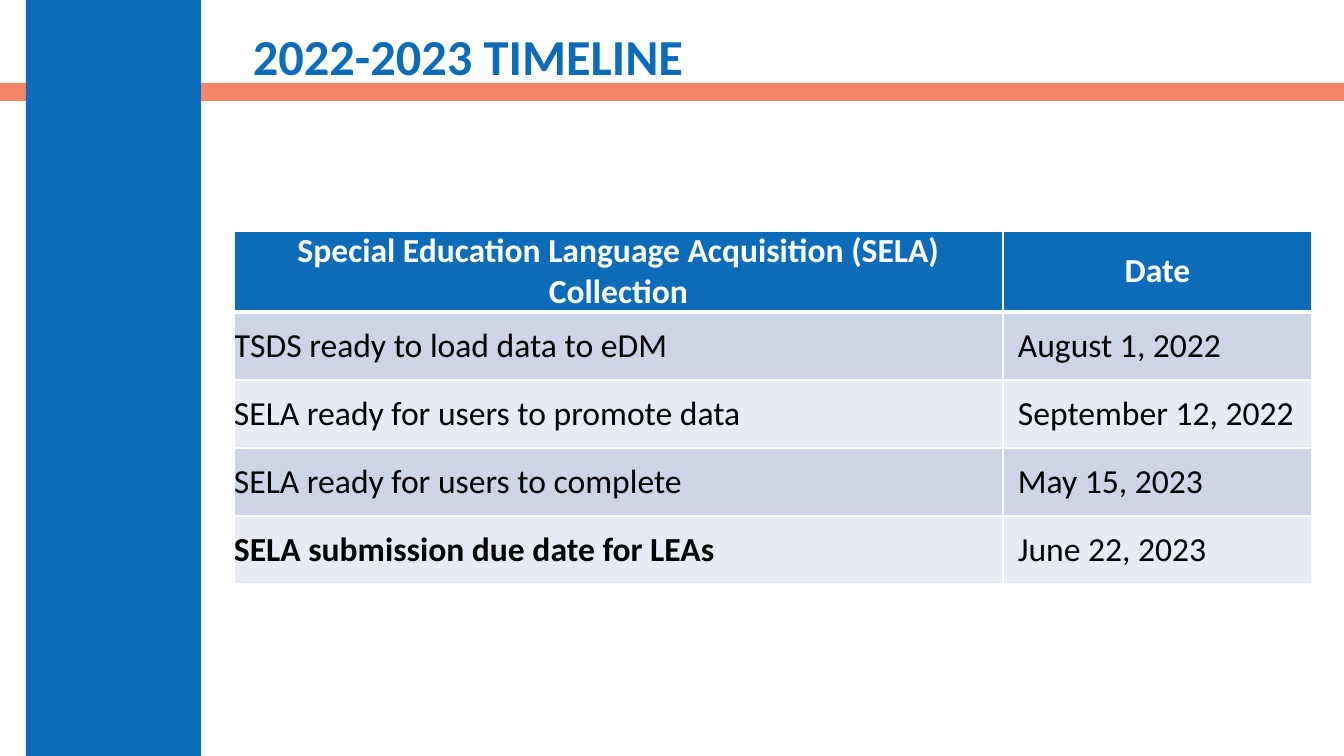
"""Build the 2022-2023 timeline slide with its table of collection dates."""
from dataclasses import dataclass

from lxml import etree
from pptx import Presentation
from pptx.dml.color import RGBColor
from pptx.enum.shapes import MSO_SHAPE
from pptx.enum.text import MSO_ANCHOR, PP_ALIGN
from pptx.oxml.ns import qn
from pptx.util import Emu, Pt

RECTANGLE = MSO_SHAPE.RECTANGLE
MIDDLE = MSO_ANCHOR.MIDDLE
LEFT, CENTER = PP_ALIGN.LEFT, PP_ALIGN.CENTER

PAGE_WIDTH, PAGE_HEIGHT = 1344, 756
EMU_PER_PX = 12192000 / PAGE_WIDTH
FONT = "Calibri"
COLORS = {
    "blue": "0D6CB9",
    "coral": "F16038",
    "white": "FFFFFF",
    "black": "000000",
    "band_dark": "CCD4E6",
    "band_light": "E7EBF3",
}

TABLE_LEFT, TABLE_TOP = 234, 231
COLUMN_WIDTHS = (769, 309)
HEADER_HEIGHT, ROW_HEIGHT = 81, 68
DATE_INDENT = 15
THIN_BORDER, HEADER_BORDER = 1, 3


@dataclass(frozen=True)
class Bar:
    left: int
    top: int
    width: int
    height: int
    color: str
    opacity: int = 100


@dataclass(frozen=True)
class Milestone:
    event: str
    date: str
    bold: bool = False


BARS = (
    Bar(0, 83, PAGE_WIDTH, 18, "coral", 76),
    Bar(26, 0, 175, PAGE_HEIGHT, "blue"),
)
HEADINGS = ("Special Education Language Acquisition (SELA) Collection", "Date")
MILESTONES = (
    Milestone("TSDS ready to load data to eDM", "August 1, 2022"),
    Milestone("SELA ready for users to promote data", "September 12, 2022"),
    Milestone("SELA ready for users to complete", "May 15, 2023"),
    Milestone("SELA submission due date for LEAs", "June 22, 2023", True),
)


def px(length: int) -> Emu:
    """Turn pixels into EMU."""
    return Emu(round(length * EMU_PER_PX))


def rgb(name: str) -> RGBColor:
    """Look up a named colour."""
    return RGBColor.from_string(COLORS[name])


def style_text(para, size: int, color: str, bold: bool) -> None:
    """Set the font of a whole paragraph."""
    font = para.font
    font.name, font.size, font.bold = FONT, Pt(size), bold
    font.color.rgb = rgb(color)


def add_bar(page, bar: Bar) -> None:
    """Draw a plain rectangle, see-through if its opacity is below 100."""
    shape = page.shapes.add_shape(
        RECTANGLE, px(bar.left), px(bar.top), px(bar.width), px(bar.height))
    shape.shadow.inherit = False
    shape.line.fill.background()
    shape.fill.solid()
    shape.fill.fore_color.rgb = rgb(bar.color)
    if bar.opacity < 100:
        color = shape._element.spPr.find(qn("a:solidFill"))[0]
        etree.SubElement(color, qn("a:alpha"), val=str(bar.opacity * 1000))


def add_title(page, text: str) -> None:
    """Write the slide title."""
    box = page.shapes.add_textbox(px(243), px(18), px(1061), px(83))
    frame = box.text_frame
    frame.word_wrap = True
    frame.vertical_anchor = MIDDLE
    para = frame.paragraphs[0]
    para.text = text
    para.line_spacing = 0.9
    style_text(para, 36, "blue", True)


def set_borders(cell, top: int, bottom: int) -> None:
    """Give a cell white borders, placed ahead of its fill."""
    widths = {"lnL": THIN_BORDER, "lnR": THIN_BORDER, "lnT": top, "lnB": bottom}
    properties = cell._tc.get_or_add_tcPr()
    for index, (side, width) in enumerate(widths.items()):
        line = etree.Element(qn(f"a:{side}"), w=str(Pt(width)))
        fill = etree.SubElement(line, qn("a:solidFill"))
        etree.SubElement(fill, qn("a:srgbClr"), val=COLORS["white"])
        properties.insert(index, line)


def fill_cell(cell, text: str, fill: str, color: str, bold: bool,
              align: PP_ALIGN, indent: int = 0) -> None:
    """Write and colour one table cell."""
    cell.margin_left = px(indent)
    cell.margin_right = cell.margin_top = cell.margin_bottom = 0
    cell.vertical_anchor = MIDDLE
    cell.fill.solid()
    cell.fill.fore_color.rgb = rgb(fill)
    para = cell.text_frame.paragraphs[0]
    para.text = text
    para.alignment = align
    style_text(para, 24, color, bold)


def add_timeline(page) -> None:
    """Draw the table of milestones and dates."""
    row_count = len(MILESTONES) + 1
    height = HEADER_HEIGHT + ROW_HEIGHT * len(MILESTONES)
    table = page.shapes.add_table(
        row_count, len(COLUMN_WIDTHS), px(TABLE_LEFT), px(TABLE_TOP),
        px(sum(COLUMN_WIDTHS)), px(height)).table
    for column, width in zip(table.columns, COLUMN_WIDTHS):
        column.width = px(width)
    for index, row in enumerate(table.rows):
        row.height = px(ROW_HEIGHT if index else HEADER_HEIGHT)
        for cell in row.cells:
            set_borders(cell, HEADER_BORDER if index == 1 else THIN_BORDER,
                        HEADER_BORDER if index == 0 else THIN_BORDER)

    for column, heading in enumerate(HEADINGS):
        fill_cell(table.cell(0, column), heading, "blue", "white", True, CENTER)
    for row, item in enumerate(MILESTONES, start=1):
        band = "band_dark" if row % 2 else "band_light"
        fill_cell(table.cell(row, 0), item.event, band, "black", item.bold, LEFT)
        fill_cell(table.cell(row, 1), item.date, band, "black", False, LEFT,
                  DATE_INDENT)


def main() -> None:
    """Build and save the deck."""
    deck = Presentation()
    deck.slide_width, deck.slide_height = px(PAGE_WIDTH), px(PAGE_HEIGHT)
    page = deck.slides.add_slide(deck.slide_layouts[6])
    for bar in BARS:
        add_bar(page, bar)
    add_title(page, "2022-2023 TIMELINE")
    add_timeline(page)
    deck.save("out.pptx")


if __name__ == "__main__":
    main()
